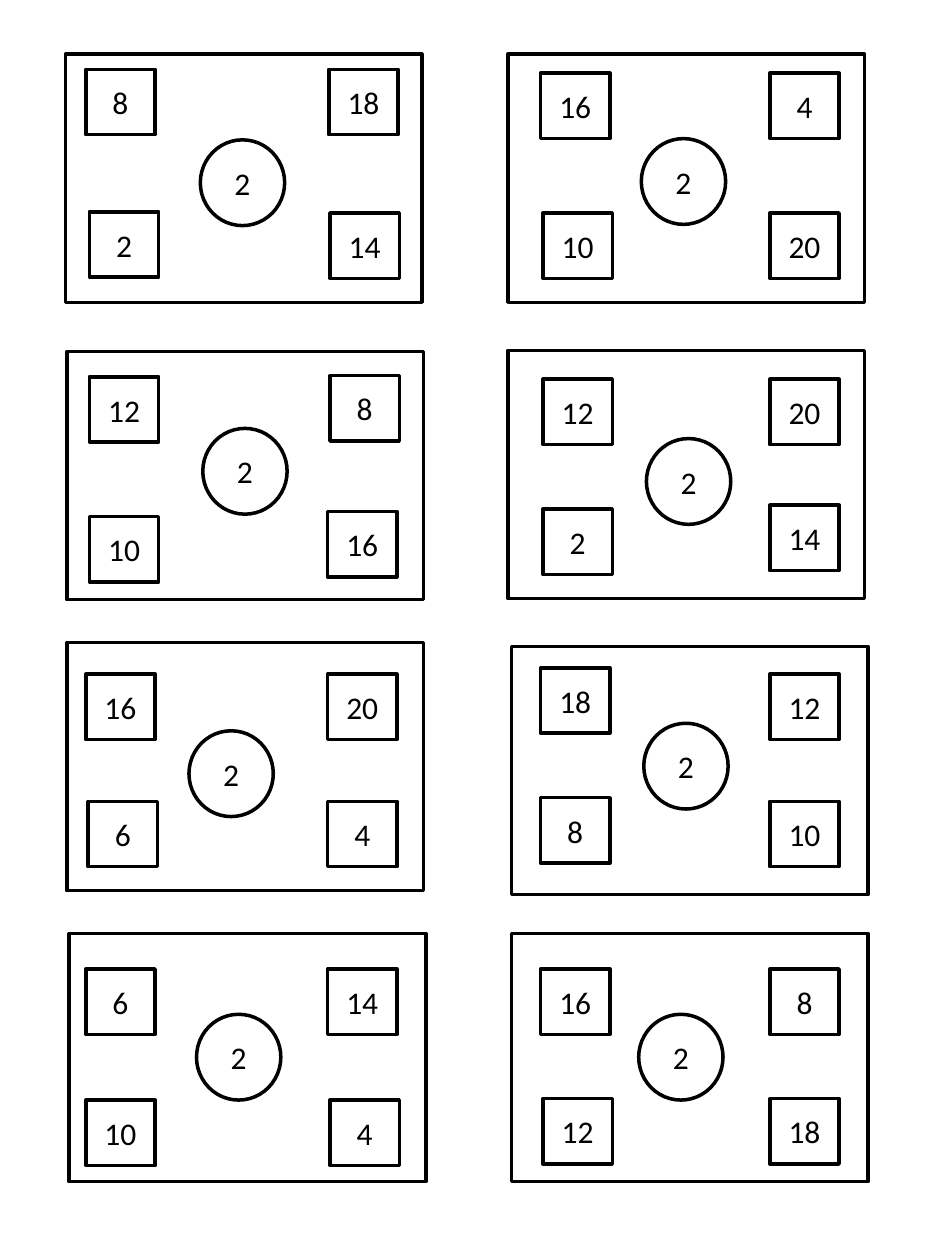
from pptx import Presentation
from pptx.dml.color import RGBColor
from pptx.enum.shapes import MSO_SHAPE
from pptx.enum.text import MSO_ANCHOR, PP_ALIGN
from pptx.util import Pt

RECTANGLE, OVAL = MSO_SHAPE.RECTANGLE, MSO_SHAPE.OVAL
MIDDLE, CENTER = MSO_ANCHOR.MIDDLE, PP_ALIGN.CENTER

COLORS = {"paper": "FFFFFF", "ink": "000000"}
CARD_SIZE = (203.8, 141.8)
SQUARE_SIZE = (39.6, 37.4)
CIRCLE_SIZE = (48.2, 49)

# Each card: its corner, its (number, left, top) circle and its four squares
CARDS = [
    {"corner": (37.4, 31), "circle": ("2", 114.5, 79.9),
     "squares": [("8", 49, 39.6), ("18", 187.9, 39.6),
                 ("2", 51.1, 121), ("14", 188.6, 121.7)]},
    {"corner": (290.2, 31), "circle": ("2", 366.5, 79.2),
     "squares": [("16", 308.9, 41.8), ("4", 439.9, 41.8),
                 ("10", 310.3, 121.7), ("20", 439.9, 121.7)]},
    {"corner": (38.2, 200.9), "circle": ("2", 115.9, 244.8),
     "squares": [("12", 51.1, 215.3), ("8", 188.6, 214.6),
                 ("10", 51.1, 295.2), ("16", 187.2, 292.3)]},
    {"corner": (290.2, 200.2), "circle": ("2", 369.4, 250.6),
     "squares": [("12", 310.3, 216.7), ("20", 439.9, 216.7),
                 ("2", 310.3, 290.9), ("14", 439.9, 288.7)]},
    {"corner": (38.2, 367.2), "circle": ("2", 108, 417.6),
     "squares": [("16", 49, 385.2), ("20", 187.2, 385.2),
                 ("6", 50.4, 457.9), ("4", 187.2, 457.9)]},
    {"corner": (292.3, 369.4), "circle": ("2", 367.9, 413.3),
     "squares": [("18", 308.9, 381.6), ("12", 439.9, 385.2),
                 ("8", 308.9, 455.8), ("10", 439.9, 457.9)]},
    {"corner": (39.6, 533.5), "circle": ("2", 112.3, 579.6),
     "squares": [("6", 49, 553.7), ("14", 187.2, 553.7),
                 ("10", 49, 628.6), ("4", 188.6, 628.6)]},
    {"corner": (292.3, 533.5), "circle": ("2", 365, 579.6),
     "squares": [("16", 308.9, 553.7), ("8", 439.9, 553.7),
                 ("12", 310.3, 627.8), ("18", 439.9, 627.8)]},
]


def add_outline(slide, kind, corner, size):
    outline = slide.shapes.add_shape(kind, *map(Pt, (*corner, *size)))
    outline.shadow.inherit = False
    outline.fill.solid()
    outline.fill.fore_color.rgb = RGBColor.from_string(COLORS["paper"])
    outline.line.color.rgb = RGBColor.from_string(COLORS["ink"])
    outline.line.width = Pt(2)
    return outline


def add_number(slide, kind, entry, size):
    number, *corner = entry
    frame = add_outline(slide, kind, corner, size).text_frame
    frame.vertical_anchor = MIDDLE
    paragraph = frame.paragraphs[0]
    paragraph.alignment = CENTER
    run = paragraph.add_run()
    run.text = number
    for name, value in {"name": "Calibri", "size": Pt(18)}.items():
        setattr(run.font, name, value)
    run.font.color.rgb = RGBColor.from_string(COLORS["ink"])


def main():
    prs = Presentation()
    prs.slide_width, prs.slide_height = Pt(540), Pt(720)
    slide = prs.slides.add_slide(prs.slide_layouts[6])
    for card in CARDS:
        add_outline(slide, RECTANGLE, card["corner"], CARD_SIZE)
        for square in card["squares"]:
            add_number(slide, RECTANGLE, square, SQUARE_SIZE)
        add_number(slide, OVAL, card["circle"], CIRCLE_SIZE)
    prs.save("out.pptx")


if __name__ == "__main__":
    main()
